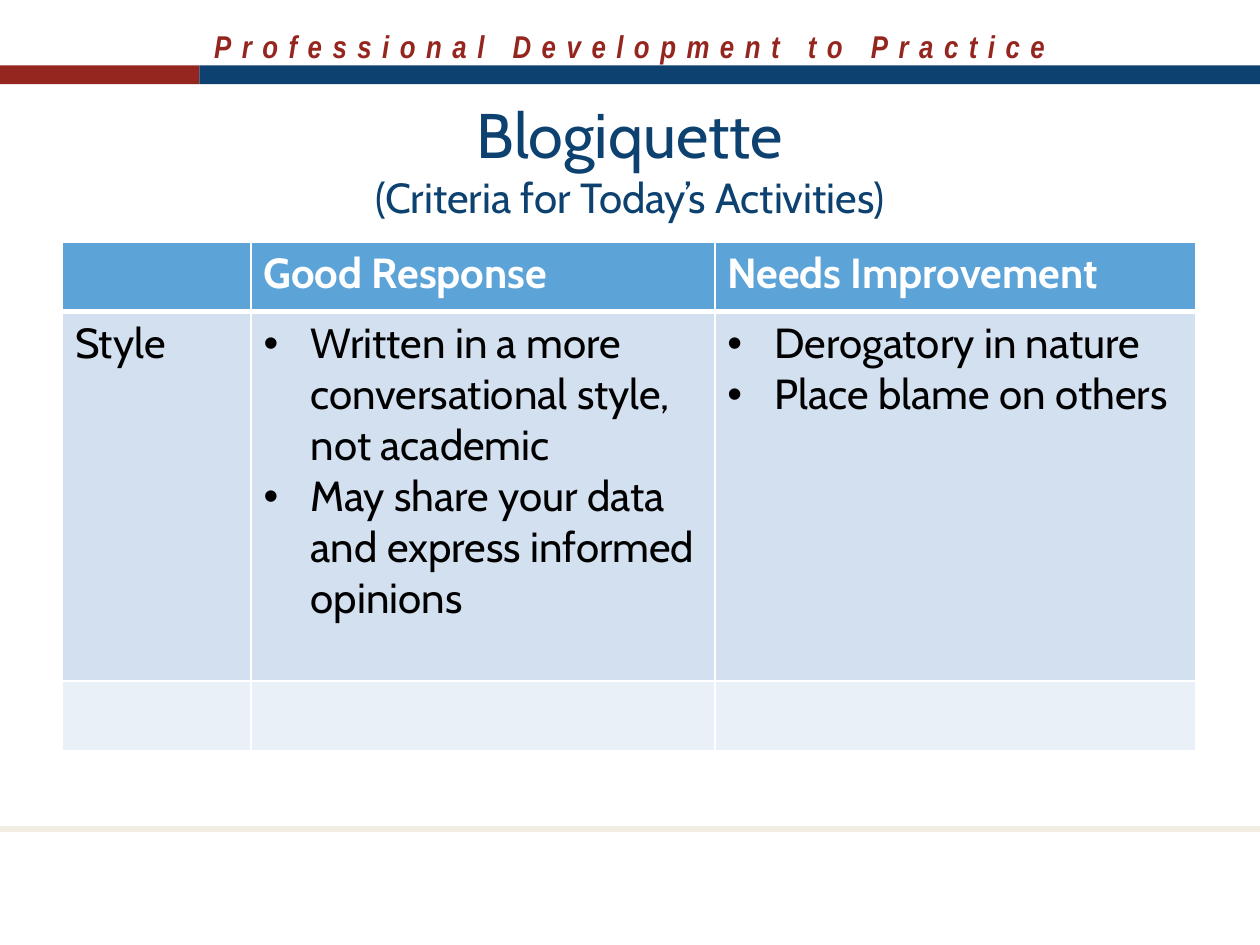
from lxml import etree
from pptx import Presentation, util as u
from pptx.dml.color import RGBColor
from pptx.enum import shapes, text
from pptx.oxml import ns

RED, NAVY, SAND = "95261F", "0D4170", "F2EDE2"
HEAD, BAND, PALE = "5CA3D8", "D2E0F0", "EAF0F8"
WHITE, BLACK = "FFFFFF", "000000"


def color(value):
    return RGBColor.from_string(value)


class SlideBuilder:
    font = "Cabin"

    def __init__(self, slide):
        self.s = slide

    def run(self, p, words, hue, **extra):
        r = p.add_run()
        r.text = words
        for key, value in {"name": self.font, "size": u.Pt(24), **extra}.items():
            setattr(r.font, key, value)
        r.font.color.rgb = color(hue)
        return r

    def textbox(self, x, y, w, h, anchor=text.MSO_ANCHOR.TOP):
        sp = self.s.shapes.add_textbox(u.Cm(x), u.Cm(y), u.Cm(w), u.Cm(h))
        tf = sp.text_frame
        tf.word_wrap = True
        tf.vertical_anchor = anchor
        p = tf.paragraphs[0]
        p.alignment = text.PP_ALIGN.CENTER
        return p

    def bar(self, x, y, w, h, hue):
        sp = self.s.shapes.add_shape(shapes.MSO_SHAPE.RECTANGLE,
                                     u.Cm(x), u.Cm(y), u.Cm(w), u.Cm(h))
        sp.shadow.inherit = False
        sp.fill.solid()
        sp.fill.fore_color.rgb = color(hue)
        sp.line.fill.background()

    def rule(self, x1, y1, x2, y2, hue, width):
        line = self.s.shapes.add_connector(shapes.MSO_CONNECTOR.STRAIGHT,
                                           u.Cm(x1), u.Cm(y1), u.Cm(x2), u.Cm(y2))
        line.line.color.rgb = color(hue)
        line.line.width = u.Pt(width)
        etree.SubElement(line._element.spPr, ns.qn("a:effectLst"))

    def bullet(self, p, indent):
        pPr = p._p.get_or_add_pPr()
        pPr.set("marL", str(u.Cm(indent)))
        pPr.set("indent", str(-u.Cm(indent)))
        etree.SubElement(pPr, ns.qn("a:buFont"), typeface="Arial")
        etree.SubElement(pPr, ns.qn("a:buChar"), char="•")

    def borders(self, cell, top, bottom):
        tcPr = cell._tc.get_or_add_tcPr()
        widths = {"lnL": 1, "lnR": 1, "lnT": top, "lnB": bottom}
        for i, (side, width) in enumerate(widths.items()):
            ln = etree.Element(ns.qn(f"a:{side}"), w=str(u.Pt(width)))
            fill = etree.SubElement(ln, ns.qn("a:solidFill"))
            etree.SubElement(fill, ns.qn("a:srgbClr"), val=WHITE)
            tcPr.insert(i, ln)

    def table(self, x, y, cols, rows, cells, fills):
        table = self.s.shapes.add_table(len(rows), len(cols), u.Cm(x), u.Cm(y),
                                        u.Cm(sum(cols)), u.Cm(sum(rows))).table
        table.horz_banding = False
        for column, width in zip(table.columns, cols):
            column.width = u.Cm(width)
        for i, (row, height) in enumerate(zip(table.rows, rows)):
            row.height = u.Cm(height)
            for cell, content in zip(row.cells, cells[i]):
                cell.fill.solid()
                cell.fill.fore_color.rgb = color(fills[i])
                self.borders(cell, 3 if i == 1 else 1, 3 if i == 0 else 1)
                self.cell_text(cell.text_frame, content, header=i == 0)

    def cell_text(self, tf, content, header):
        # A list becomes bullets, a string a plain paragraph
        bulleted = isinstance(content, list)
        for n, words in enumerate(content if bulleted else [content]):
            p = tf.paragraphs[0] if n == 0 else tf.add_paragraph()
            if bulleted:
                self.bullet(p, 0.95)
            if words:
                self.run(p, words, WHITE if header else BLACK, bold=header)


def main():
    prs = Presentation()
    prs.slide_width, prs.slide_height = u.Cm(25.4), u.Cm(19.05)
    b = SlideBuilder(prs.slides.add_slide(prs.slide_layouts[6]))

    # Banner
    p = b.textbox(0, 0.43, 25.4, 1.02)
    r = b.run(p, "Professional Development to Practice", RED,
              name="Arial Narrow", size=u.Pt(18), bold=True, italic=True)
    r._r.get_or_add_rPr().set("spc", "600")
    b.bar(0, 1.32, 4.02, 0.38, RED)
    b.bar(4.02, 1.32, 21.38, 0.38, NAVY)

    # Footer rule
    b.rule(0, 16.71, 25.4, 16.71, SAND, 3)

    # Title
    p = b.textbox(1.27, 1.68, 22.86, 3.05, text.MSO_ANCHOR.MIDDLE)
    b.run(p, "Blogiquette", NAVY, size=u.Pt(36))
    p.add_line_break()
    b.run(p, "(Criteria for Today’s Activities)", NAVY)

    # Criteria table
    b.table(1.26, 4.88, [3.8, 9.35, 9.7], [1.4, 7.45, 1.4], [
        ["", "Good Response", "Needs Improvement"],
        ["Style",
         ["Written in a more conversational style, not academic",
          "May share your data and express informed opinions"],
         ["Derogatory in nature", "Place blame on others"]],
        ["", "", ""],
    ], [HEAD, BAND, PALE])

    prs.save("out.pptx")


if __name__ == "__main__":
    main()
